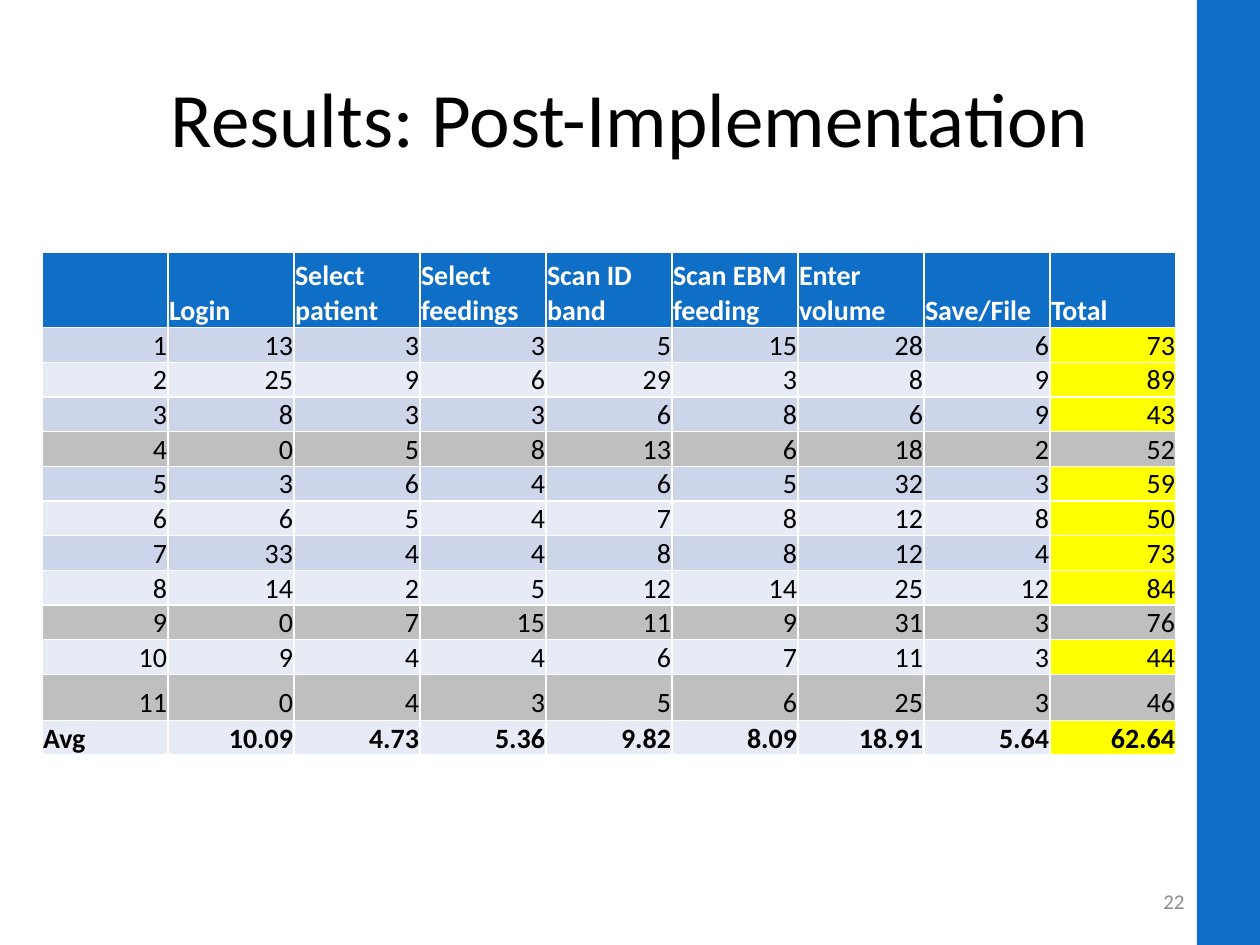
from pptx import Presentation
from pptx.dml.color import RGBColor
from pptx.enum.shapes import MSO_SHAPE
from pptx.enum.text import MSO_ANCHOR, PP_ALIGN
from pptx.util import Pt

LEFT, CENTER, RIGHT = PP_ALIGN.LEFT, PP_ALIGN.CENTER, PP_ALIGN.RIGHT
MIDDLE, BOTTOM = MSO_ANCHOR.MIDDLE, MSO_ANCHOR.BOTTOM
RECTANGLE = MSO_SHAPE.RECTANGLE
TITLE_ONLY = 5

BLUE, YELLOW, GREY = "0F6FC6", "FFFF00", "BFBFBF"
BANDS = ("E7EBF5", "CCD5EA")
EXCLUDED_ROWS = (4, 9, 11)
HEADER_HEIGHT, ROW_HEIGHT, TALL_ROW_HEIGHT = 43.2, 19.44, 26.28
TALL_ROW = 11
COLUMN_WIDTH = 72

ROWS = [
    ["", "Login", "Select patient", "Select feedings", "Scan ID band",
     "Scan EBM feeding", "Enter volume", "Save/File", "Total"],
    [1, 13, 3, 3, 5, 15, 28, 6, 73],
    [2, 25, 9, 6, 29, 3, 8, 9, 89],
    [3, 8, 3, 3, 6, 8, 6, 9, 43],
    [4, 0, 5, 8, 13, 6, 18, 2, 52],
    [5, 3, 6, 4, 6, 5, 32, 3, 59],
    [6, 6, 5, 4, 7, 8, 12, 8, 50],
    [7, 33, 4, 4, 8, 8, 12, 4, 73],
    [8, 14, 2, 5, 12, 14, 25, 12, 84],
    [9, 0, 7, 15, 11, 9, 31, 3, 76],
    [10, 9, 4, 4, 6, 7, 11, 3, 44],
    [11, 0, 4, 3, 5, 6, 25, 3, 46],
    ["Avg", 10.09, 4.73, 5.36, 9.82, 8.09, 18.91, 5.64, 62.64],
]


def color(value):
    return RGBColor.from_string(value)


def write_text(text_frame, text, size=16, font_color="000000", bold=False, align=LEFT):
    text_frame.word_wrap = True
    paragraph = text_frame.paragraphs[0]
    paragraph.alignment = align
    run = paragraph.add_run()
    run.text = text
    run.font.name = "Calibri"
    run.font.size = Pt(size)
    run.font.bold = bold
    run.font.color.rgb = color(font_color)


def add_side_bar(slide):
    bar = slide.shapes.add_shape(RECTANGLE, Pt(684), Pt(0), Pt(36), Pt(540))
    bar.shadow.inherit = False
    bar.fill.solid()
    bar.fill.fore_color.rgb = color(BLUE)
    bar.line.fill.background()


def add_title(slide, text):
    title = slide.shapes.title
    title.left, title.top, title.width, title.height = Pt(36), Pt(21.6), Pt(648), Pt(90)
    title.text_frame.vertical_anchor = MIDDLE
    write_text(title.text_frame, text, size=44, align=CENTER)


def add_page_number(slide, text):
    box = slide.shapes.add_textbox(Pt(516), Pt(500.5), Pt(168), Pt(28.75))
    box.text_frame.vertical_anchor = MIDDLE
    write_text(box.text_frame, text, size=12, font_color="8C8C8C", align=RIGHT)


def fill_for(row, column):
    if row == 0:
        return BLUE
    if row in EXCLUDED_ROWS:
        return GREY
    return YELLOW if column == len(ROWS[0]) - 1 else BANDS[row % 2]


def format_cell(cell, value, row, column):
    cell.margin_left = cell.margin_right = cell.margin_top = Pt(0.6)
    cell.margin_bottom = Pt(0)
    cell.vertical_anchor = BOTTOM
    cell.fill.solid()
    cell.fill.fore_color.rgb = color(fill_for(row, column))
    if value != "":
        write_text(cell.text_frame, str(value),
                   font_color="FFFFFF" if row == 0 else "000000",
                   bold=row in (0, len(ROWS) - 1),
                   align=LEFT if isinstance(value, str) else RIGHT)


def add_results_table(slide):
    """White cell lines come from the default table style."""
    heights = [ROW_HEIGHT] * len(ROWS)
    heights[0], heights[TALL_ROW] = HEADER_HEIGHT, TALL_ROW_HEIGHT
    column_count = len(ROWS[0])
    table = slide.shapes.add_table(
        len(ROWS), column_count, Pt(24), Pt(144),
        Pt(column_count * COLUMN_WIDTH), Pt(sum(heights))).table
    for table_row, height in zip(table.rows, heights):
        table_row.height = Pt(height)
    for row, values in enumerate(ROWS):
        for column, value in enumerate(values):
            format_cell(table.cell(row, column), value, row, column)


def main():
    presentation = Presentation()
    presentation.slide_width, presentation.slide_height = Pt(720), Pt(540)
    slide = presentation.slides.add_slide(presentation.slide_layouts[TITLE_ONLY])
    add_side_bar(slide)
    add_title(slide, "Results: Post-Implementation")
    add_page_number(slide, "22")
    add_results_table(slide)
    presentation.save("out.pptx")


if __name__ == "__main__":
    main()
